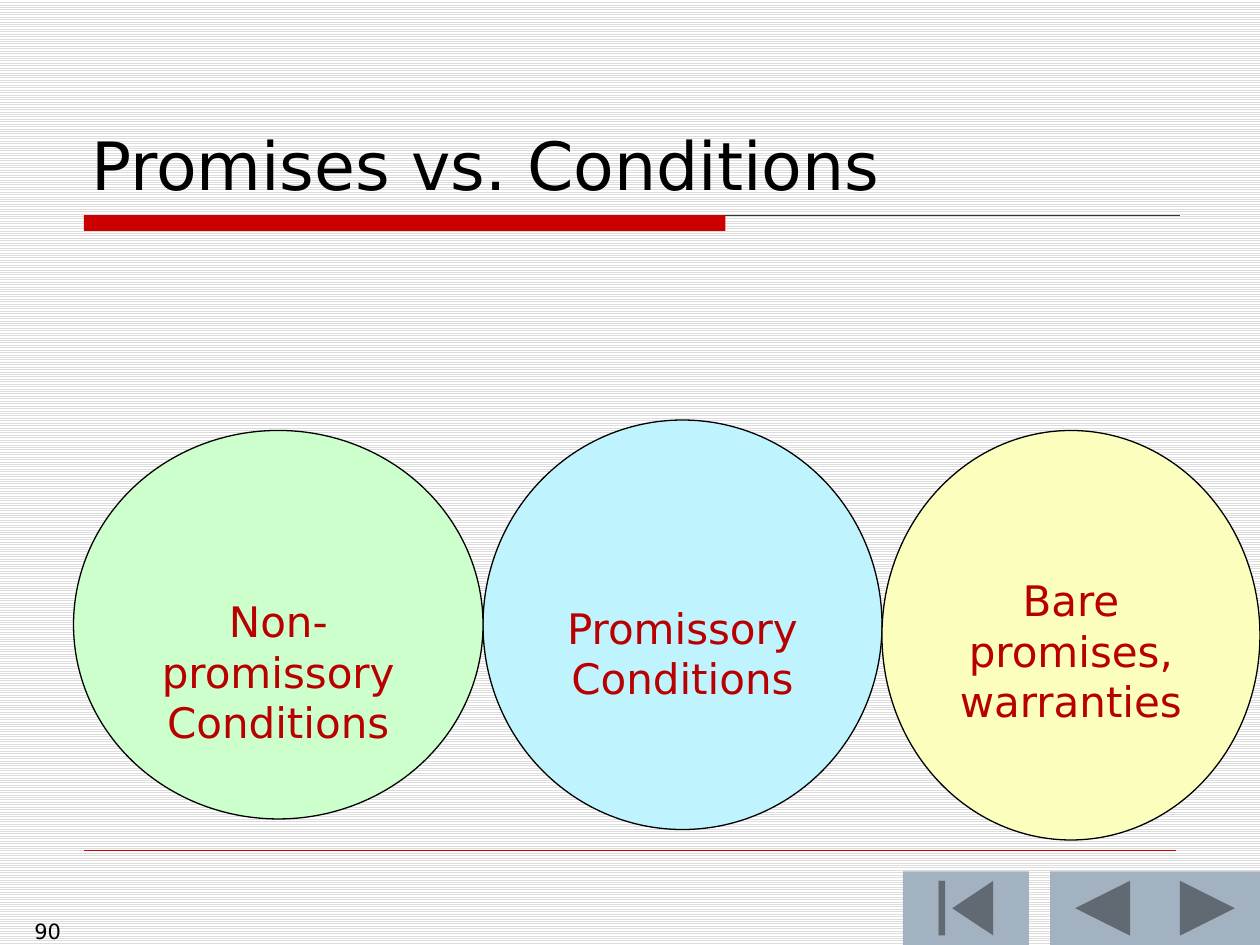
from pptx import Presentation
from pptx.dml.color import RGBColor
from pptx.enum.dml import MSO_PATTERN
from pptx.enum.shapes import MSO_CONNECTOR, MSO_SHAPE
from pptx.enum.text import MSO_ANCHOR, PP_ALIGN
from pptx.oxml.ns import qn
from pptx.util import Inches, Pt
from lxml.etree import SubElement

HUES = {
    "ink": "000000", "paper": "FFFFFF", "stripe": "DDDDDD", "red": "CC0000",
    "label": "B90000", "rule": "333333", "button": "A3B2C1",
    "green": "CCFFCC", "blue": "BFF3FD", "yellow": "FCFEBE",
}


def hue(name):
    return RGBColor.from_string(HUES[name])


class Deck:
    """Draws styled elements on a slide gridded in twelfths of an inch."""

    font = "DejaVu Sans"

    def __init__(self, cols, rows):
        self.file = Presentation()
        self.file.slide_width, self.file.slide_height = self.grid(cols, rows)
        self.slide = self.file.slides.add_slide(self.file.slide_layouts[6])
        self.shapes = self.slide.shapes

    def grid(self, *cells):
        return [Inches(cell / 12) for cell in cells]

    def back(self, fore, base):
        fill = self.slide.background.fill
        fill.patterned()
        fill.pattern = MSO_PATTERN.LIGHT_HORIZONTAL
        fill.fore_color.rgb, fill.back_color.rgb = hue(fore), hue(base)

    def label(self, frame, text, size, color, align, anchor):
        frame.word_wrap = True
        frame.vertical_anchor = anchor
        frame.text = text
        for para in frame.paragraphs:
            para.alignment = align
            para.font.name, para.font.size = self.font, Pt(size)
            para.font.color.rgb = hue(color)

    def text(self, box, text, size, align=PP_ALIGN.LEFT, anchor=MSO_ANCHOR.TOP):
        frame = self.shapes.add_textbox(*self.grid(*box)).text_frame
        self.label(frame, text, size, "ink", align, anchor)

    def shape(self, kind, box, fill, edge=None):
        shape = self.shapes.add_shape(kind, *self.grid(*box))
        shape.shadow.inherit = False
        shape.fill.solid()
        shape.fill.fore_color.rgb = hue(fill)
        if edge:
            shape.line.color.rgb, shape.line.width = hue(edge), Pt(0.75)
        else:
            shape.line.fill.background()
        return shape

    def oval(self, box, fill, text, inset):
        frame = self.shape(MSO_SHAPE.OVAL, box, fill, "ink").text_frame
        self.label(frame, text, 24, "label", PP_ALIGN.CENTER, MSO_ANCHOR.TOP)
        frame.margin_top = Inches(inset)

    def line(self, left, right, row, color, width):
        ends = self.grid(left, row, right, row)
        line = self.shapes.add_connector(MSO_CONNECTOR.STRAIGHT, *ends)
        line.line.color.rgb, line.line.width = hue(color), Pt(width)
        SubElement(line._element.spPr, qn("a:effectLst"))


def main():
    deck = Deck(120, 90)
    deck.back("stripe", "paper")
    deck.line(8, 112.4, 20.5, "rule", 0.75)
    deck.shape(MSO_SHAPE.RECTANGLE, (8, 20.5, 61.1, 1.5), "red")
    deck.line(8, 112, 81, "red", 0.25)
    for kind, col, wide in (
        (MSO_SHAPE.ACTION_BUTTON_BACK_OR_PREVIOUS, 100, 10),
        (MSO_SHAPE.ACTION_BUTTON_BEGINNING, 86, 12),
        (MSO_SHAPE.ACTION_BUTTON_FORWARD_OR_NEXT, 110, 10),
    ):
        deck.shape(kind, (col, 83, wide, 7), "button")
    deck.text((7.5, 4, 105, 16), "Promises vs. Conditions", 38,
              anchor=MSO_ANCHOR.BOTTOM)
    deck.text((0, 86.9, 7, 3.1), "90", 12, PP_ALIGN.RIGHT)
    deck.oval((46, 40, 38, 39), "blue", "Promissory Conditions", 0.97)
    deck.oval((7, 41, 39, 37), "green", "Non-promissory Conditions", 0.86)
    deck.oval((84, 41, 36, 39), "yellow", "Bare promises,\nwarranties", 0.67)
    deck.file.save("out.pptx")


if __name__ == "__main__":
    main()
